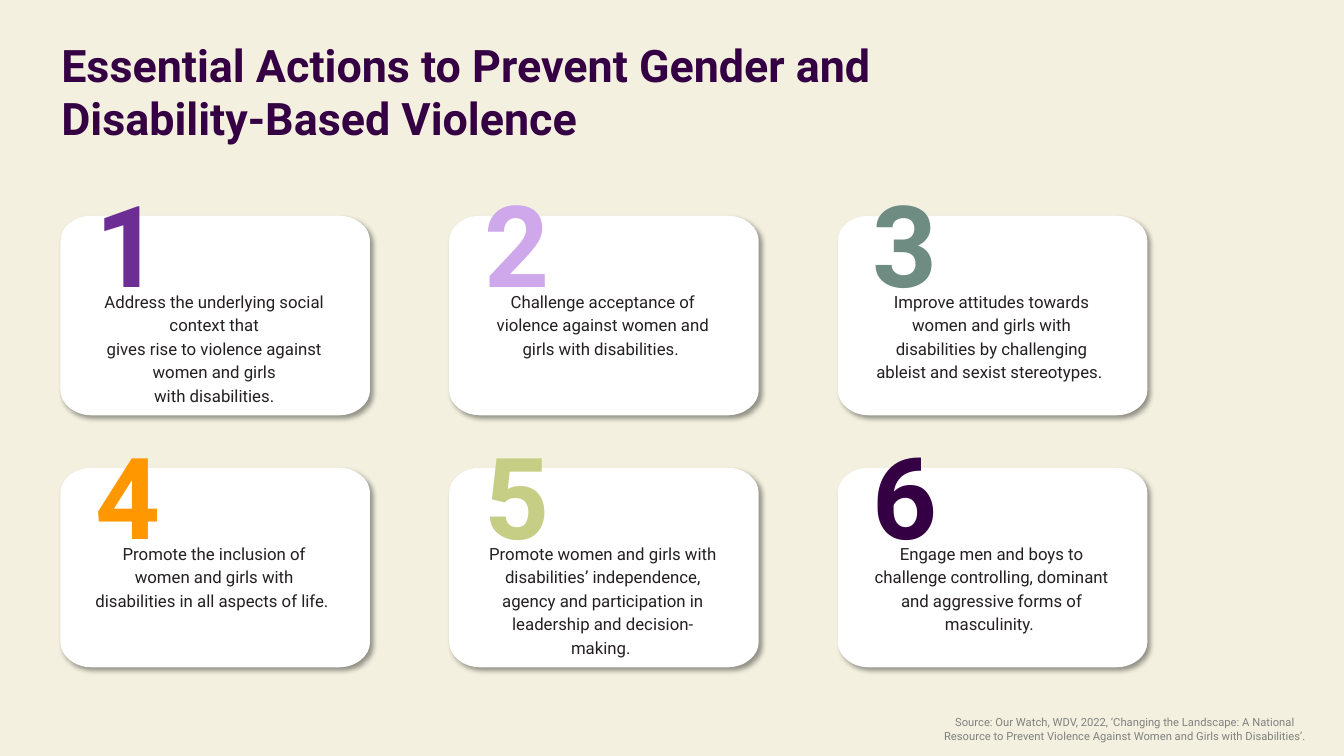
from dataclasses import dataclass

from lxml.etree import SubElement
from pptx import Presentation
from pptx.dml.color import RGBColor
from pptx.enum.text import MSO_AUTO_SIZE as AutoSize, PP_ALIGN as Align
from pptx.oxml.ns import qn
from pptx.util import Inches, Pt


@dataclass(frozen=True)
class Theme:
    font: str = "Roboto"
    background: str = "F3F0DF"
    card: str = "FFFFFF"
    shadow: str = "000000"
    heading: str = "340043"
    body: str = "241F20"
    source: str = "808080"
    numbers: tuple = ("6C2E94", "CEA8EA", "6E8C82", "FF9800", "C6CE85", "340043")
    heading_size: int = 32
    number_size: int = 81
    body_size: int = 12
    source_size: int = 8


TITLE = ["Essential Actions to Prevent Gender and", "Disability-Based Violence"]
SOURCE = ["Source: Our Watch, WDV, 2022, ‘Changing the Landscape: A National "
          "Resource to Prevent Violence Against Women and Girls with Disabilities’."]
ACTIONS = [
    ["Address the underlying social context that",
     "gives rise to violence against women and girls",
     "with disabilities."],
    ["Challenge acceptance of violence against women and girls "
     "with disabilities. "],
    ["Improve attitudes towards women and girls with disabilities "
     "by challenging ableist and sexist stereotypes. "],
    ["Promote the inclusion of women and girls with disabilities "
     "in all aspects of life. "],
    ["Promote women and girls with disabilities’ independence, "
     "agency and participation in leadership and decision-making. "],
    ["Engage men and boys to challenge controlling, dominant "
     "and aggressive forms of masculinity. "],
]
COLUMNS = 3
FIRST_LEFT, LAST_LEFT = 0.6, 8.31
COLUMN_STEP = (LAST_LEFT - FIRST_LEFT) / (COLUMNS - 1)
FIRST_TOP, ROW_STEP = 2.14, 2.5
CARD_WIDTH, CARD_HEIGHT = 3.07, 1.98
CORNER_WIDTH, CORNER_HEIGHT = 0.31, 0.25
CURVE_PULL = 0.55


class SlideBuilder:
    def __init__(self, slide, theme):
        self.slide = slide
        self.theme = theme
        fill = slide.background.fill
        fill.solid()
        fill.fore_color.rgb = RGBColor.from_string(theme.background)

    def text(self, lines, left, top, width, height, *, size, color, bold=False,
             align=Align.LEFT, leading=None, inset=True):
        box = self.slide.shapes.add_textbox(
            Inches(left), Inches(top), Inches(width), Inches(height))
        frame = box.text_frame
        frame.word_wrap = True
        frame.auto_size = AutoSize.SHAPE_TO_FIT_TEXT
        if not inset:
            frame.margin_left = frame.margin_right = 0
            frame.margin_top = frame.margin_bottom = 0
        for index, line in enumerate(lines):
            para = frame.add_paragraph() if index else frame.paragraphs[0]
            para.alignment = align
            if leading:
                para.line_spacing = Pt(leading)
            span = para.add_run()
            span.text = line
            span.font.name = self.theme.font
            span.font.size = Pt(size)
            span.font.bold = bold
            span.font.color.rgb = RGBColor.from_string(color)

    def card(self, left, top):
        """Draw a white panel whose corners are quarter ellipses."""
        near_x, far_x = CORNER_WIDTH, CARD_WIDTH - CORNER_WIDTH
        near_y, far_y = CORNER_HEIGHT, CARD_HEIGHT - CORNER_HEIGHT
        points = [(near_x, 0), (far_x, 0), (CARD_WIDTH, near_y), (CARD_WIDTH, far_y),
                  (far_x, CARD_HEIGHT), (near_x, CARD_HEIGHT), (0, far_y), (0, near_y),
                  (near_x, 0)]
        corners = [(CARD_WIDTH, 0), (CARD_WIDTH, CARD_HEIGHT), (0, CARD_HEIGHT), (0, 0)]
        placed = [(Inches(left + x), Inches(top + y)) for x, y in points]
        outline = self.slide.shapes.build_freeform(*placed[0])
        outline.add_line_segments(placed[1:], close=True)
        panel = outline.convert_to_shape()
        segments = list(panel._element.iter(qn("a:lnTo")))
        for segment, start, end, corner in zip(
                segments[1::2], points[1::2], points[2::2], corners):
            self.bend(segment, start, end, corner)
        panel.fill.solid()
        panel.fill.fore_color.rgb = RGBColor.from_string(self.theme.card)
        panel.line.fill.background()
        self.cast_shadow(panel)

    def bend(self, segment, start, end, corner):
        """Turn a straight segment into a curve pulled towards the corner."""
        segment.tag = qn("a:cubicBezTo")
        for child in list(segment):
            segment.remove(child)
        pulled = [[p + CURVE_PULL * (c - p) for p, c in zip(point, corner)]
                  for point in (start, end)]
        for x, y in (*pulled, end):
            SubElement(segment, qn("a:pt"), x=str(Inches(x)), y=str(Inches(y)))

    def cast_shadow(self, shape):
        shape.shadow.inherit = False
        effects = shape._element.spPr.find(qn("a:effectLst"))
        shadow = SubElement(effects, qn("a:outerShdw"), blurRad=str(Pt(4)),
                            dist=str(Pt(3)), dir="2700000", algn="tl", rotWithShape="0")
        color = SubElement(shadow, qn("a:srgbClr"), val=self.theme.shadow)
        SubElement(color, qn("a:alpha"), val="40000")

    def action(self, number, color, lines, left, top):
        theme = self.theme
        self.card(left, top)
        self.text(lines, left + 0.34, top + 0.72, 2.37, 1.03, size=theme.body_size,
                  color=theme.body, align=Align.CENTER, leading=16.8, inset=False)
        self.text([str(number)], left - 0.19, top - 0.64, 1.72, 1.33,
                  size=theme.number_size, color=color, bold=True,
                  align=Align.CENTER, leading=113.5, inset=False)


def main():
    deck = Presentation()
    deck.slide_width, deck.slide_height = Inches(13.33), Inches(7.5)
    theme = Theme()
    page = SlideBuilder(deck.slides.add_slide(deck.slide_layouts[6]), theme)
    for index, (color, lines) in enumerate(zip(theme.numbers, ACTIONS)):
        row, column = divmod(index, COLUMNS)
        page.action(index + 1, color, lines,
                    FIRST_LEFT + column * COLUMN_STEP, FIRST_TOP + row * ROW_STEP)
    page.text(TITLE, 0.51, 0.32, 11.37, 1.18, size=theme.heading_size,
              color=theme.heading, bold=True)
    page.text(SOURCE, 9.18, 7.05, 3.96, 0.37, size=theme.source_size,
              color=theme.source, align=Align.CENTER)
    deck.save("out.pptx")


if __name__ == "__main__":
    main()
